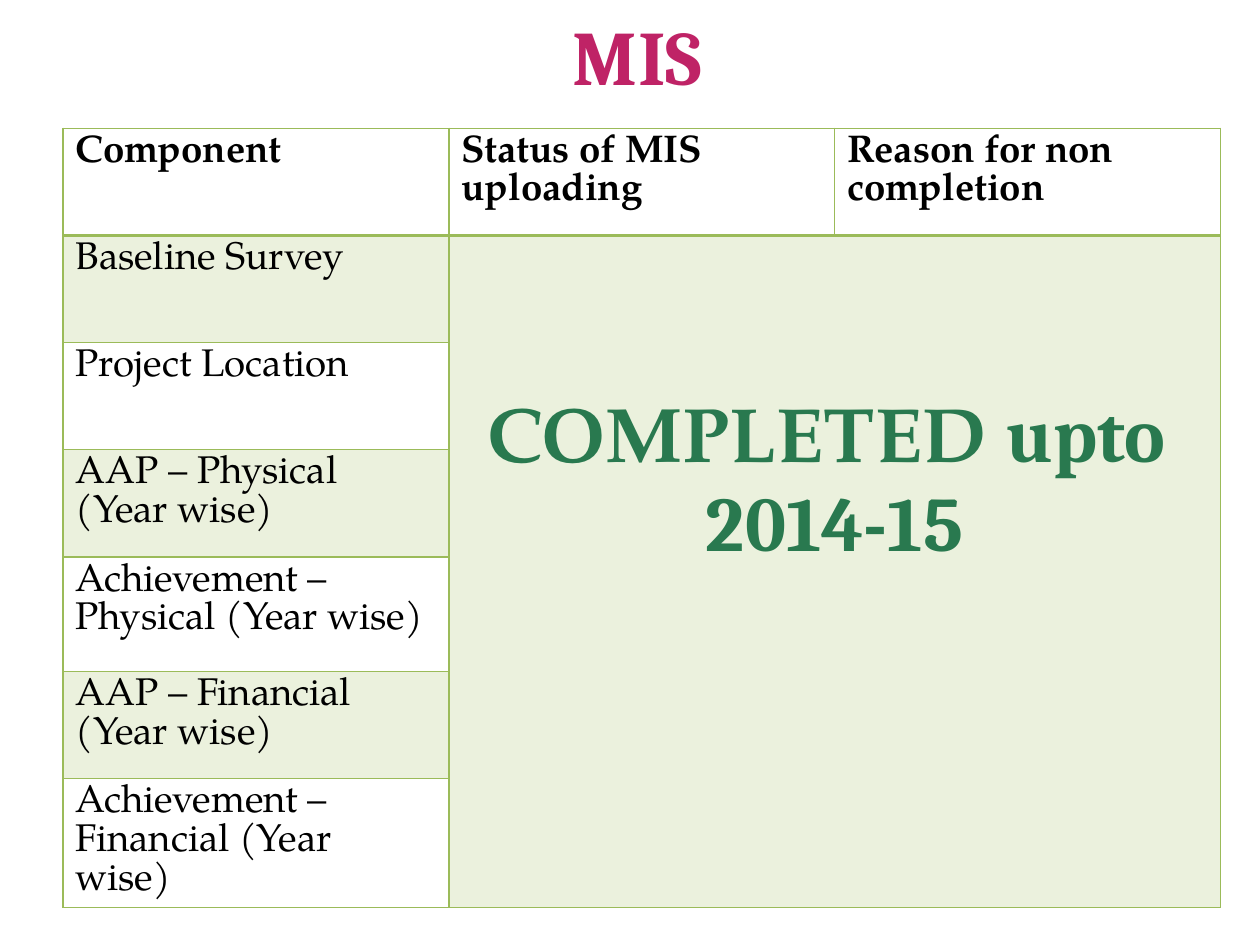
from lxml import etree
from pptx import Presentation
from pptx import util as u
from pptx.dml.color import RGBColor
from pptx.enum import text
from pptx.oxml import ns

PINK = RGBColor(0xBF, 0x23, 0x66)
GREEN = RGBColor(0x29, 0x79, 0x4F)
LIME = RGBColor(0x9B, 0xBB, 0x59)
BLACK = RGBColor(0, 0, 0)
SERIF, BOOK = "Cambria", "TeX Gyre Pagella"
BIG, BODY = 44, 22

TITLE = "MIS"
HEADS = ["Component", "Status of MIS uploading", "Reason for non completion"]
PARTS = [
    "Baseline Survey",
    "Project Location",
    "AAP – Physical (Year wise)",
    "Achievement – Physical (Year wise)",
    "AAP – Financial (Year wise)",
    "Achievement – Financial (Year wise)",
]
STATUS = [
    [("COMPLETED ", BOOK), ("upto ", SERIF)],
    [("2014-15", SERIF)],
]
ROWS = [61.2] * 4 + [65.6, 61.2, 73.6]
WIDTH = 220.5


def add_run(para, words, font, size, color, bold):
    run = para.add_run()
    run.text = words
    face = run.font
    face.name, face.size, face.bold = font, u.Pt(size), bold
    face.color.rgb = color


def edge(cell, side, width):
    line = etree.SubElement(cell._tc.get_or_add_tcPr(), ns.qn("a:ln" + side),
                            w=str(u.Pt(width)))
    fill = etree.SubElement(line, ns.qn("a:solidFill"))
    etree.SubElement(fill, ns.qn("a:srgbClr"), val=str(LIME))


def tint(cell):
    cell.fill.solid()
    cell.fill.fore_color.rgb = LIME
    color = cell._tc.tcPr.find(".//" + ns.qn("a:solidFill") + "[last()]")
    color = cell._tc.tcPr.find(ns.qn("a:solidFill"))[0]
    etree.SubElement(color, ns.qn("a:alpha"), val="20000")


def add_title(slide):
    title = slide.shapes.title
    title.left, title.top = u.Pt(44.64), u.Pt(0)
    title.width, title.height = u.Pt(639.36), u.Pt(62.64)
    frame = title.text_frame
    frame.vertical_anchor = text.MSO_ANCHOR.MIDDLE
    para = frame.paragraphs[0]
    para.alignment = text.PP_ALIGN.CENTER
    add_run(para, TITLE, SERIF, BIG, PINK, True)


def add_status(cell):
    cell.margin_top = u.Pt(90)
    frame = cell.text_frame
    for i, runs in enumerate(STATUS):
        para = frame.add_paragraph() if i else frame.paragraphs[0]
        para.alignment = text.PP_ALIGN.CENTER
        for words, font in runs:
            add_run(para, words, font, BIG, GREEN, True)


def add_grid(slide):
    grid = slide.shapes.add_table(
        len(ROWS), len(HEADS), u.Pt(36), u.Pt(73.4),
        u.Pt(WIDTH * len(HEADS)), u.Pt(sum(ROWS))).table
    grid.first_row = grid.horz_banding = False
    for col in grid.columns:
        col.width = u.Pt(WIDTH)
    for r, high in enumerate(ROWS):
        grid.rows[r].height = u.Pt(high)
        for c in range(len(HEADS)):
            cell = grid.cell(r, c)
            for side in "LRTB":
                thick = (r, side) in [(0, "B"), (1, "T")]
                edge(cell, side, 2 if thick else 1)
            if r and (c or r % 2):
                tint(cell)
            else:
                cell.fill.background()
    for c, words in enumerate(HEADS):
        para = grid.cell(0, c).text_frame.paragraphs[0]
        add_run(para, words, BOOK, BODY, BLACK, True)
    for r, words in enumerate(PARTS, 1):
        para = grid.cell(r, 0).text_frame.paragraphs[0]
        add_run(para, words, BOOK, BODY, BLACK, False)
    block = grid.cell(1, 1)
    block.merge(grid.cell(len(PARTS), 2))
    add_status(block)


def main():
    deck = Presentation()
    deck.slide_width, deck.slide_height = u.Pt(720), u.Pt(540)
    slide = deck.slides.add_slide(deck.slide_layouts[5])
    add_title(slide)
    add_grid(slide)
    deck.save("out.pptx")


if __name__ == "__main__":
    main()
